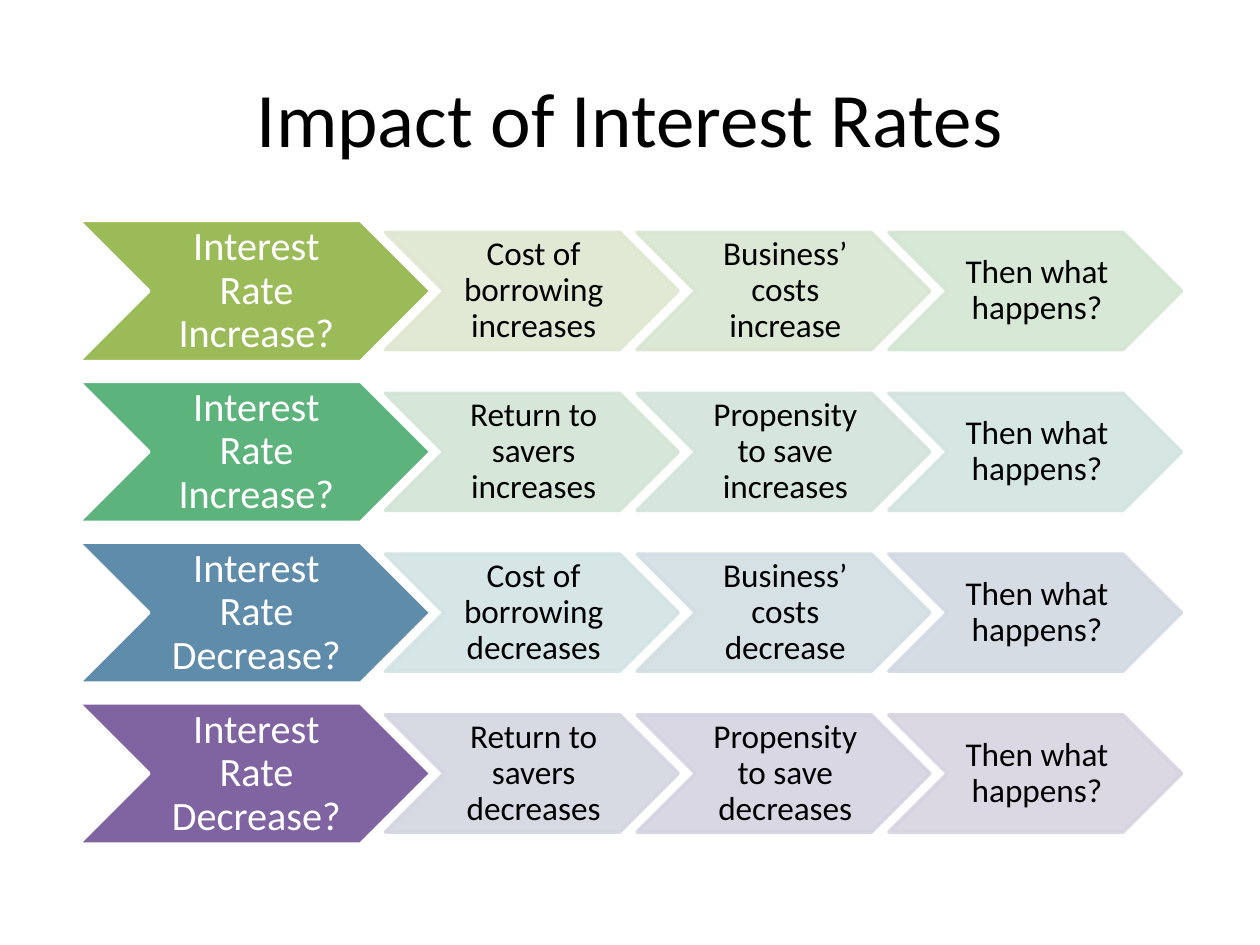
from pptx import Presentation, util as u
from pptx.dml.color import RGBColor
from pptx.enum import shapes, text
from pptx.oxml.ns import qn
from lxml import etree

Pt = u.Pt


def paint(fmt, color, alpha=100):
    fmt.solid()
    fmt.fore_color.rgb = RGBColor.from_string(color)
    if alpha < 100:
        clr = fmt._xPr.find(".//" + qn("a:srgbClr"))
        etree.SubElement(clr, qn("a:alpha")).set("val", str(alpha * 1000))


def write(tf, words, size, color):
    tf.word_wrap = True
    tf.vertical_anchor = text.MSO_ANCHOR.MIDDLE
    p = tf.paragraphs[0]
    p.alignment = text.PP_ALIGN.CENTER
    r = p.add_run()
    r.text = words
    r.font.size = Pt(size)
    r.font.name = "Calibri"
    paint(r.font.fill, color)
    return p


prs = Presentation()
prs.slide_width, prs.slide_height = Pt(720), Pt(540)
s = prs.slides.add_slide(prs.slide_layouts[5])

title = s.shapes.title
title.left, title.top, title.width, title.height = Pt(36), Pt(21.6), Pt(648), Pt(90)
write(title.text_frame, "Impact of Interest Rates", 44, "000000")

rows = [
    [("Interest Rate Increase?", "9BBB59"), ("Cost of borrowing increases", "DEE7D1"),
     ("Business’ costs increase", "D8E6D1"), ("Then what happens?", "D3E6D2")],
    [("Interest Rate Increase?", "5CB37C"), ("Return to savers increases", "D2E5D6"),
     ("Propensity to save increases", "D2E4DB"), ("Then what happens?", "D2E4E0")],
    [("Interest Rate Decrease?", "608CAB"), ("Cost of borrowing decreases", "D2E3E3"),
     ("Business’ costs decrease", "D2DEE3"), ("Then what happens?", "D2D9E2")],
    [("Interest Rate Decrease?", "8064A2"), ("Return to savers decreases", "D3D5E1"),
     ("Propensity to save decreases", "D4D3E1"), ("Then what happens?", "D8D3E0")],
]

for i, row in enumerate(rows):
    middle = 166.3 + 91.9 * i
    for j, (words, color) in enumerate(row):
        if j == 0:
            x, w, h, size, ink, line, alpha = 44.8, 201.6, 80.64, 23, "FFFFFF", "FFFFFF", 100
        else:
            x, w, h, size, ink, line, alpha = 220.3 + 143.8 * (j - 1), 167.3, 66.9, 19, "000000", color, 90
        sp = s.shapes.add_shape(shapes.MSO_SHAPE.CHEVRON, Pt(x), Pt(middle - h / 2), Pt(w), Pt(h))
        sp.shadow.inherit = False
        paint(sp.fill, color, alpha)
        sp.line.width = Pt(2)
        paint(sp.line.fill, line, alpha)
        tf = sp.text_frame
        tf.margin_left, tf.margin_right = Pt(2), 0
        tf.margin_top = tf.margin_bottom = Pt(1)
        write(tf, words, size, ink).line_spacing = 0.9

prs.save("out.pptx")
